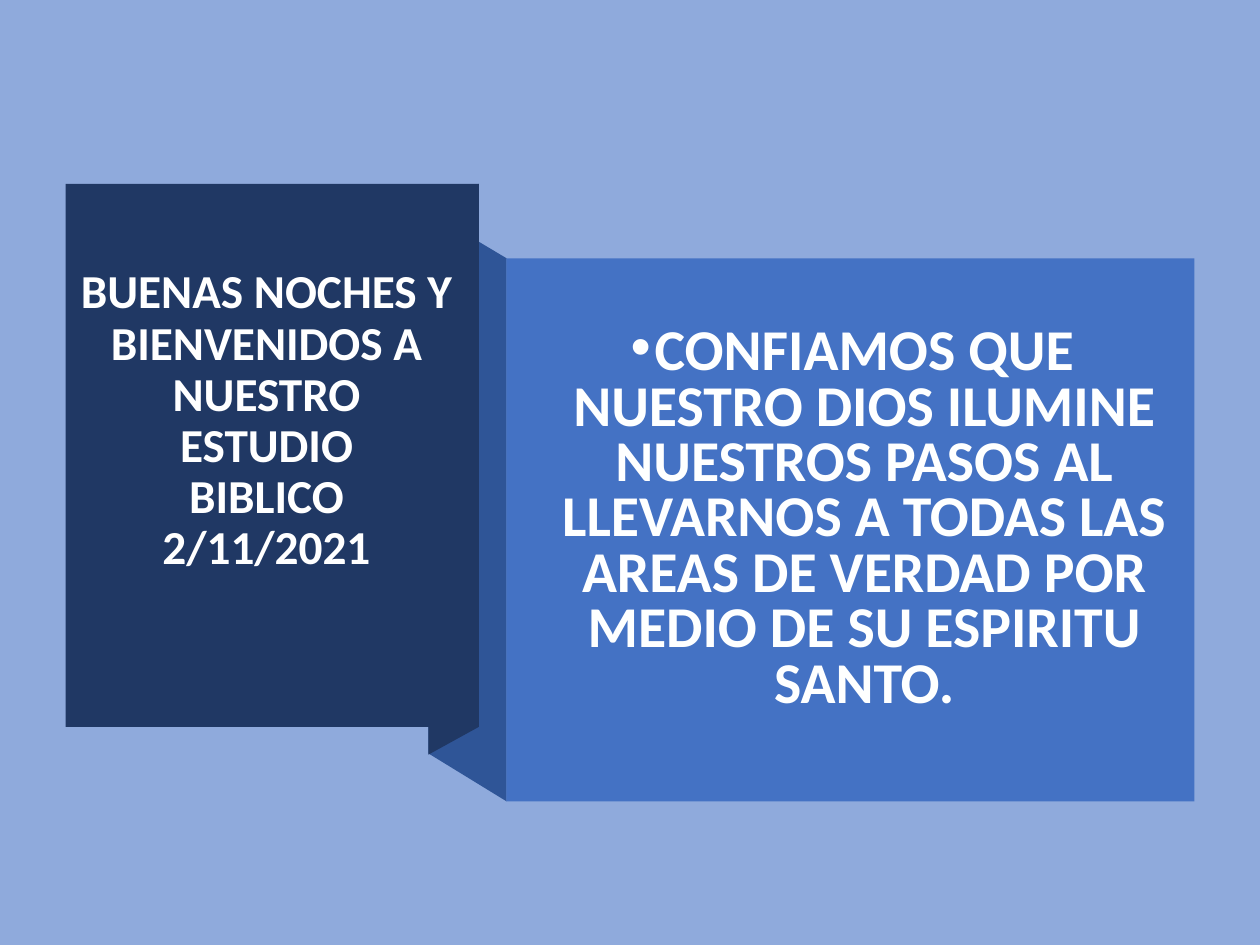
"""Welcome slide with a folded ribbon joining two text panels."""
from dataclasses import dataclass

from lxml import etree
from pptx import Presentation
from pptx import util as u
from pptx.dml.color import RGBColor
from pptx.enum import shapes, text
from pptx.oxml.ns import qn


@dataclass(frozen=True)
class Theme:
    back: str = "8FAADC"
    navy: str = "203864"
    fold: str = "2F5597"
    panel: str = "4472C4"
    title_ink: str = "FFFFFF"
    body_ink: str = "FEFFFF"
    font: str = "Calibri"
    title_size: int = 27
    body_size: int = 33


class Deck:
    COLS, ROWS = 100, 75

    def __init__(self, theme):
        self.theme = theme
        self.prs = Presentation()
        self.prs.slide_width, self.prs.slide_height = u.Inches(10), u.Inches(7.5)
        self.s = self.prs.slides.add_slide(self.prs.slide_layouts[6])
        fill = self.s.background.fill
        fill.solid()
        fill.fore_color.rgb = RGBColor.from_string(theme.back)

    def x(self, cols):
        return round(self.prs.slide_width * cols / self.COLS)

    def y(self, rows):
        return round(self.prs.slide_height * rows / self.ROWS)

    def box(self, left, top, width, height):
        return self.x(left), self.y(top), self.x(width), self.y(height)

    def paint(self, sp, color):
        sp.shadow.inherit = False
        sp.fill.solid()
        sp.fill.fore_color.rgb = RGBColor.from_string(color)
        sp.line.fill.background()

    def rect(self, area, color):
        sp = self.s.shapes.add_shape(shapes.MSO_SHAPE.RECTANGLE, *self.box(*area))
        self.paint(sp, color)

    def polygon(self, points, color):
        start, *rest = [(self.x(c), self.y(r)) for c, r in points]
        fb = self.s.shapes.build_freeform(*start)
        fb.add_line_segments(rest, close=True)
        self.paint(fb.convert_to_shape(), color)

    def text(self, area, words, size, color, spacing, bottom=0.05, bullet=None):
        tf = self.s.shapes.add_textbox(*self.box(*area)).text_frame
        tf.word_wrap = True
        tf.vertical_anchor = text.MSO_ANCHOR.MIDDLE
        tf.margin_bottom = u.Inches(bottom)
        p = tf.paragraphs[0]
        p.text = words
        p.alignment = text.PP_ALIGN.CENTER
        p.line_spacing = spacing
        if bullet:
            self.bullet(p, bullet)
        for r in p.runs:
            r.font.name = self.theme.font
            r.font.size = u.Pt(size)
            r.font.bold = True
            r.font.color.rgb = RGBColor.from_string(color)

    def bullet(self, p, char, indent=0.19):
        ppr = p._p.get_or_add_pPr()
        ppr.set("marL", str(u.Inches(indent)))
        ppr.set("indent", str(-u.Inches(indent)))
        etree.SubElement(ppr, qn("a:buFont"), typeface="Arial")
        etree.SubElement(ppr, qn("a:buChar"), char=char)


def main():
    theme = Theme()
    deck = Deck(theme)
    left, tuck, edge, panel = 5.2, 34, 38, 40.2
    top, height = 14.6, 43.1
    base = top + height
    panel_top = 20.5

    deck.polygon([(panel, panel_top + height), (tuck, 59.8), (tuck, 16.8),
                  (panel, panel_top)], theme.fold)
    deck.polygon([(edge, base), (tuck, 59.9), (tuck, 16.7), (edge, top)], theme.navy)
    deck.rect((left, top, edge - left, height), theme.navy)
    deck.text((4.9, 16.8, 32.5, 37.4),
              "BUENAS NOCHES Y\vBIENVENIDOS A NUESTRO\vESTUDIO\vBIBLICO\v2/11/2021",
              theme.title_size, theme.title_ink, 0.9, bottom=0.46)
    deck.rect((panel, panel_top, 54.6, height), theme.panel)
    deck.text((40.5, 23.5, 54.3, 35.6),
              "CONFIAMOS QUE NUESTRO DIOS ILUMINE NUESTROS PASOS AL LLEVARNOS A "
              "TODAS LAS AREAS DE VERDAD POR MEDIO DE SU ESPIRITU SANTO.",
              theme.body_size, theme.body_ink, 0.8, bullet="•")
    deck.prs.save("out.pptx")


if __name__ == "__main__":
    main()
